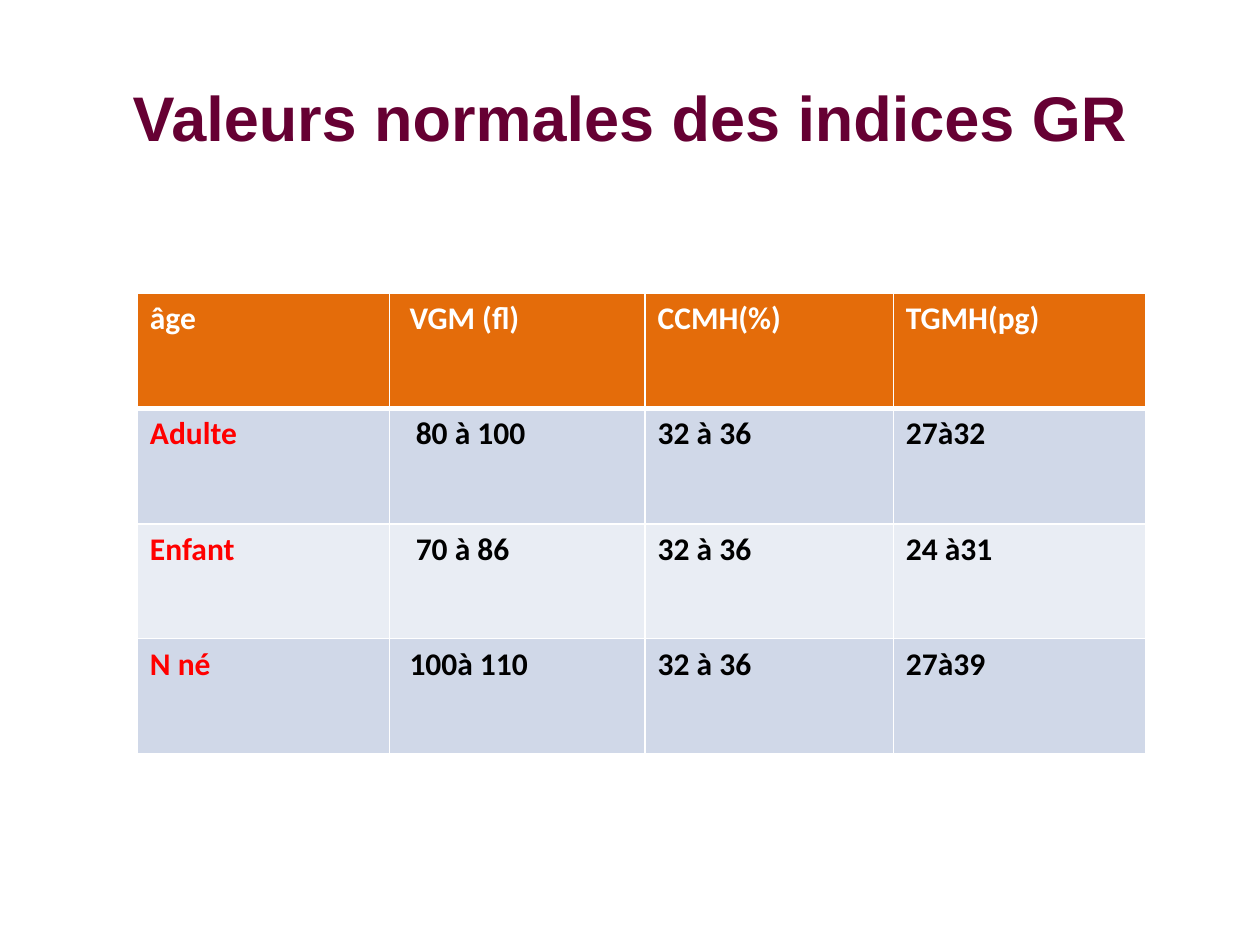
from lxml.etree import SubElement
from pptx import Presentation
from pptx.dml.color import RGBColor
from pptx.enum.text import MSO_ANCHOR, PP_ALIGN
from pptx.oxml.ns import qn
from pptx.util import Inches, Pt

COLORS = {
    "title": "660033",
    "header": "E46C0A",
    "band_dark": "D0D8E8",
    "band_light": "E9EDF4",
    "white": "FFFFFF",
    "black": "000000",
    "age": "FF0000",
}

ROWS = [
    ["âge", "VGM (fl)", "CCMH(%)", "TGMH(pg)"],
    ["Adulte", "80 à 100", "32 à 36", "27à32"],
    ["Enfant", "70 à 86", "32 à 36", "24 à31"],
    ["N né", "100à 110", "32 à 36", "27à39"],
]
COLUMN_WIDTHS = [2, 2.03, 1.97, 2]
ROW_HEIGHTS = [0.91, 0.92, 0.91, 0.91]
VGM_COLUMN = 1
VGM_INDENTS = [0.16, 0.21, 0.21, 0.16]


def write_text(frame, text, *, font, size, color, bold=True, align=PP_ALIGN.LEFT):
    paragraph = frame.paragraphs[0]
    paragraph.alignment = align
    run = paragraph.add_run()
    run.text = text
    run.font.name = font
    run.font.size = Pt(size)
    run.font.bold = bold
    run.font.color.rgb = RGBColor.from_string(COLORS[color])


def set_borders(cell, color, **widths):
    """Draw the cell's sides; widths are points keyed L, R, T, B in that order."""
    properties = cell._tc.get_or_add_tcPr()
    for side, width in widths.items():
        line = SubElement(properties, qn(f"a:ln{side}"), w=str(Pt(width)))
        fill = SubElement(line, qn("a:solidFill"))
        SubElement(fill, qn("a:srgbClr"), val=COLORS[color])


class SlideBuilder:
    title_font = "Arial"
    table_font = "Calibri"

    def __init__(self, slide):
        self.slide = slide

    def title(self, text, left, top, width, height):
        shape = self.slide.shapes.title
        shape.left, shape.top = Inches(left), Inches(top)
        shape.width, shape.height = Inches(width), Inches(height)
        shape.text_frame.vertical_anchor = MSO_ANCHOR.MIDDLE
        write_text(shape.text_frame, text, font=self.title_font, size=36,
                   color="title", align=PP_ALIGN.CENTER)

    def table(self, rows, left, top):
        table = self.slide.shapes.add_table(
            len(rows), len(COLUMN_WIDTHS), Inches(left), Inches(top),
            Inches(sum(COLUMN_WIDTHS)), Inches(sum(ROW_HEIGHTS))).table
        for column, width in zip(table.columns, COLUMN_WIDTHS):
            column.width = Inches(width)
        for row, height in zip(table.rows, ROW_HEIGHTS):
            row.height = Inches(height)
        for row_index, values in enumerate(rows):
            for column_index, value in enumerate(values):
                self.cell(table.cell(row_index, column_index), value,
                          row_index, column_index)

    def cell(self, cell, text, row, column):
        if row == 0:
            fill, color = "header", "white"
        else:
            fill = "band_dark" if row % 2 else "band_light"
            color = "black" if column else "age"
        set_borders(cell, "white", L=1, R=1,
                    T=3 if row == 1 else 1, B=3 if row == 0 else 1)
        cell.fill.solid()
        cell.fill.fore_color.rgb = RGBColor.from_string(COLORS[fill])
        if column == VGM_COLUMN:
            cell.margin_left = Inches(VGM_INDENTS[row])
        write_text(cell.text_frame, text, font=self.table_font, size=18, color=color)


def main():
    presentation = Presentation()
    presentation.slide_width = Inches(10)
    presentation.slide_height = Inches(7.5)
    title_only = presentation.slide_layouts[5]
    builder = SlideBuilder(presentation.slides.add_slide(title_only))
    builder.title("Valeurs normales des indices GR", 0.5, 0.3, 9, 1.25)
    builder.table(ROWS, 1.09, 2.33)
    presentation.save("out.pptx")


if __name__ == "__main__":
    main()
